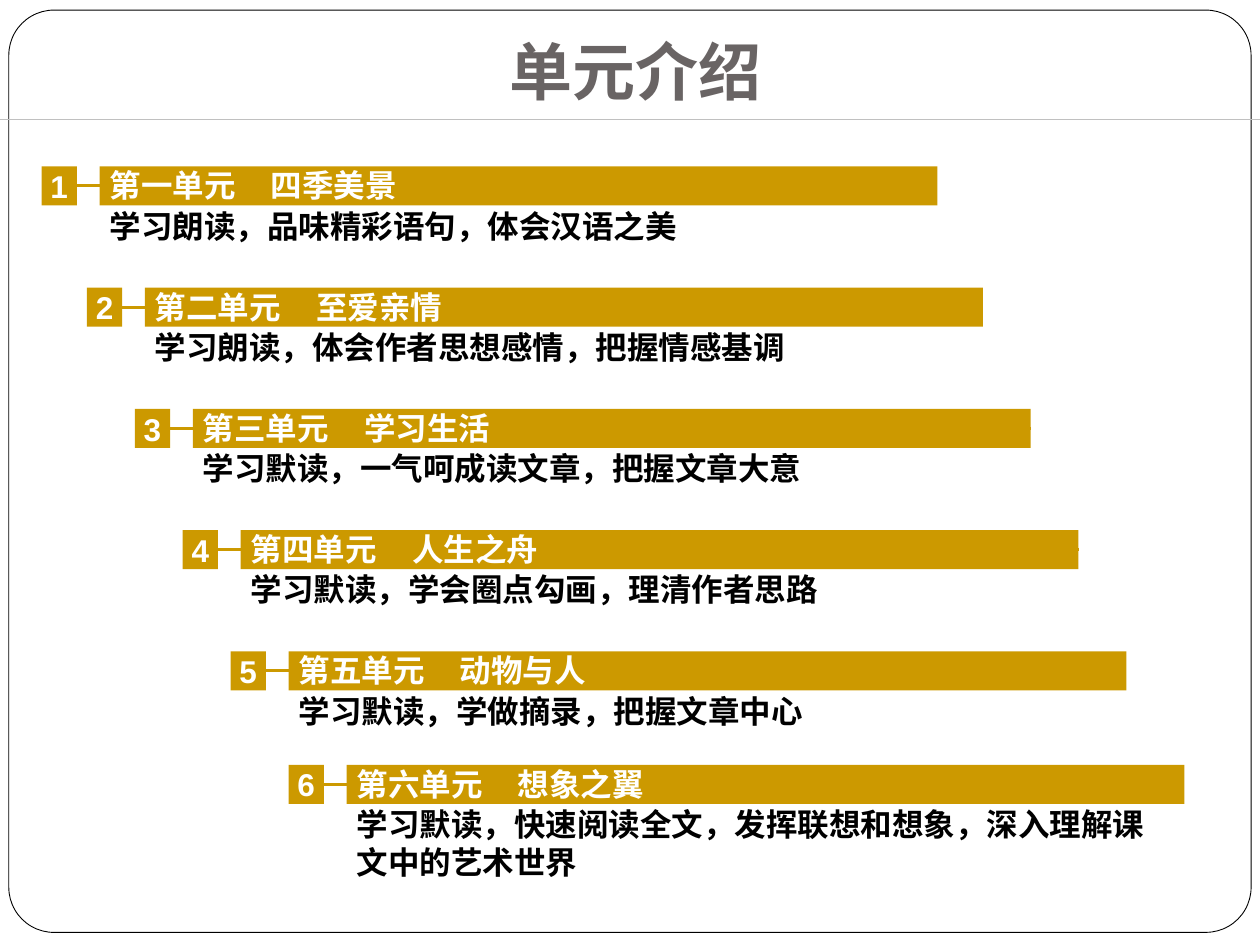
from lxml import etree
from pptx import Presentation
from pptx.dml.color import RGBColor
from pptx.enum.shapes import MSO_CONNECTOR, MSO_SHAPE
from pptx.enum.text import MSO_ANCHOR, PP_ALIGN
from pptx.oxml.ns import qn
from pptx.util import Inches, Pt

RECT, ROUND = MSO_SHAPE.RECTANGLE, MSO_SHAPE.ROUNDED_RECTANGLE
STRAIGHT = MSO_CONNECTOR.STRAIGHT
MIDDLE = MSO_ANCHOR.MIDDLE
LEFT, CENTER = PP_ALIGN.LEFT, PP_ALIGN.CENTER

W, H = 10, 7.5
GOLD, WHITE, BLACK, GREY, SILVER = "CC9900", "FFFFFF", "000000", "696464", "C0C0C0"
LATIN, CJK = "Arial", "Noto Sans CJK SC"

# Offsets within one unit row
BADGE_W, BAR_X, BAR_W, BAR_H = 0.28, 0.46, 6.65, 0.31
PAD, TAB = 0.08, 1.28
ROW_TOP, ROW_STEP = 1.32, 0.9625

# left, top, unit, theme, goal, lines in the goal
UNITS = [
    (0.33, "第一单元", "四季美景", "学习朗读，品味精彩语句，体会汉语之美", 1),
    (0.69, "第二单元", "至爱亲情", "学习朗读，体会作者思想感情，把握情感基调", 1),
    (1.07, "第三单元", "学习生活", "学习默读，一气呵成读文章，把握文章大意", 1),
    (1.45, "第四单元", "人生之舟", "学习默读，学会圈点勾画，理清作者思路", 1),
    (1.83, "第五单元", "动物与人", "学习默读，学做摘录，把握文章中心", 1),
    (2.29, "第六单元", "想象之翼",
     "学习默读，快速阅读全文，发挥联想和想象，深入理解课文中的艺术世界", 2),
]
LAST_TOP = 6.07


def rgb(color):
    return RGBColor.from_string(color)


def add_box(s, kind, box, fill, line=None):
    sp = s.shapes.add_shape(kind, *map(Inches, box))
    sp.shadow.inherit = False
    sp.fill.solid()
    sp.fill.fore_color.rgb = rgb(fill)
    if line:
        sp.line.color.rgb = rgb(line)
        sp.line.width = Pt(0.5)
    else:
        sp.line.fill.background()
    return sp


def add_line(s, x1, x2, y, color, width):
    ln = s.shapes.add_connector(STRAIGHT, *map(Inches, (x1, y, x2, y)))
    ln.line.color.rgb = rgb(color)
    ln.line.width = Pt(width)
    etree.SubElement(ln._element.spPr, qn("a:effectLst"))


def write(sp, text, color, font=CJK, size=18, align=LEFT, wrap=True, tab=None):
    tf = sp.text_frame
    frame = {"word_wrap": wrap, "vertical_anchor": MIDDLE, "margin_left": 0,
             "margin_right": 0, "margin_top": 0, "margin_bottom": 0}
    for name, value in frame.items():
        setattr(tf, name, value)
    p = tf.paragraphs[0]
    p.alignment = align
    if tab:
        tabs = etree.SubElement(p._p.get_or_add_pPr(), qn("a:tabLst"))
        etree.SubElement(tabs, qn("a:tab"), pos=str(Inches(tab)), algn="l")
    r = p.add_run()
    r.text = text
    for name, value in {"name": font, "size": Pt(size), "bold": True}.items():
        setattr(r.font, name, value)
    r.font.color.rgb = rgb(color)
    etree.SubElement(r._r.get_or_add_rPr(), qn("a:ea"), typeface=CJK)


def add_text(s, box, text, color, **fmt):
    write(s.shapes.add_textbox(*map(Inches, box)), text, color, **fmt)


def add_frame(s, box):
    sp = add_box(s, ROUND, box, WHITE, BLACK)
    sp.adjustments[0] = 0.049


def add_title(s, box, text):
    add_text(s, box, text, GREY, size=36, align=CENTER)
    add_line(s, 0, W, 0.95, SILVER, 0.75)


def add_unit(s, x, y, number, unit, theme, goal, lines):
    bar_x = x + BAR_X
    text_x, text_w = bar_x + PAD, BAR_W - 2 * PAD
    # Link runs behind the badge and the bar
    add_line(s, x + BADGE_W / 2, bar_x + BAR_W, y + BAR_H / 2, GOLD, 1.75)
    badge = add_box(s, RECT, (x, y, BADGE_W, BAR_H), GOLD)
    write(badge, str(number), WHITE, font=LATIN, align=CENTER, wrap=False)
    add_box(s, RECT, (bar_x, y, BAR_W, BAR_H), GOLD)
    # Heading on the bar, goal below it
    add_text(s, (text_x, y, text_w, 0.3), f"{unit}\t{theme}", WHITE,
             font=LATIN, tab=TAB)
    add_text(s, (text_x, y + 0.32, text_w, 0.3 * lines), goal, BLACK)


def main():
    prs = Presentation()
    prs.slide_width, prs.slide_height = Inches(W), Inches(H)
    s = prs.slides.add_slide(prs.slide_layouts[6])
    add_frame(s, (0.07, 0.08, 9.86, 7.32))
    for i, (x, *content) in enumerate(UNITS):
        y = LAST_TOP if i == len(UNITS) - 1 else ROW_TOP + i * ROW_STEP
        add_unit(s, x, y, i + 1, *content)
    add_title(s, (0.28, 0.29, 9.52, 0.53), "单元介绍")
    prs.save("out.pptx")


if __name__ == "__main__":
    main()
